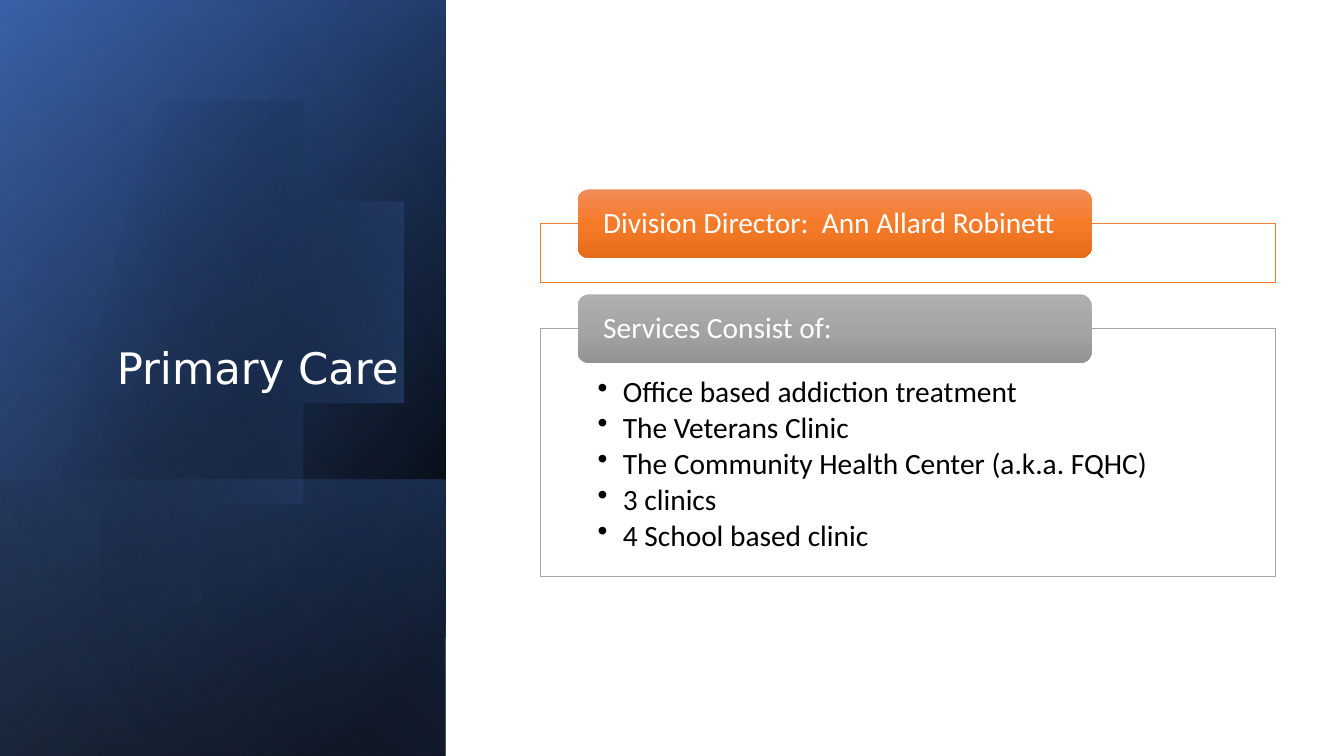
from dataclasses import dataclass
from math import acos, cos, sin

from lxml.etree import SubElement
from pptx import Presentation
from pptx.dml.color import RGBColor
from pptx.enum.shapes import MSO_SHAPE as Preset
from pptx.enum.text import MSO_ANCHOR as Anchor, PP_ALIGN as Align
from pptx.oxml.ns import qn
from pptx.util import Emu, Inches, Pt

COLORS = {"white": "FFFFFF", "black": "000000", "navy": "2F5597", "blue": "4472C4",
          "pale_blue": "8FAADC", "orange": "ED7D31", "gray": "A5A5A5"}
TITLE_FONT, BODY_FONT = "DejaVu Sans", "Calibri"

presentation = Presentation()
presentation.slide_width, presentation.slide_height = Inches(13.333), Inches(7.5)
slide = presentation.slides.add_slide(presentation.slide_layouts[6])

# The grid has 100 columns and 100 rows
COLUMN, ROW = presentation.slide_width / 100, presentation.slide_height / 100


@dataclass(frozen=True)
class Area:
    """Left and width in columns, top and height in rows."""
    left: float
    top: float
    width: float
    height: float

    def box(self) -> tuple:
        return tuple(Emu(round(length)) for length in (
            self.left * COLUMN, self.top * ROW, self.width * COLUMN, self.height * ROW))


@dataclass(frozen=True)
class Stop:
    position: int
    color: str
    opacity: int = 100


@dataclass(frozen=True)
class Panel:
    area: Area
    stops: tuple
    angle: int


@dataclass(frozen=True)
class Card:
    heading: str
    items: tuple
    top: float
    height: float
    accent: str
    shades: tuple


def rgb(name: str) -> RGBColor:
    return RGBColor.from_string(COLORS[name])


def fill_gradient(shape, stops: tuple, angle: float) -> None:
    shape.fill.gradient()
    gradient = shape._element.spPr.find(qn("a:gradFill"))
    for child in list(gradient):
        gradient.remove(child)
    gradient.set("rotWithShape", "1")
    stop_list = SubElement(gradient, qn("a:gsLst"))
    for stop in stops:
        mark = SubElement(stop_list, qn("a:gs"), pos=str(stop.position * 1000))
        color = SubElement(mark, qn("a:srgbClr"), val=COLORS.get(stop.color, stop.color))
        if stop.opacity < 100:
            SubElement(color, qn("a:alpha"), val=str(stop.opacity * 1000))
    SubElement(gradient, qn("a:lin"), ang=str(round(angle * 60000)), scaled="0")
    shape.line.fill.background()
    shape.shadow.inherit = False


def draw_panel(panel: Panel) -> None:
    """Turn a mirrored rectangle by 90 degrees so that it covers the area."""
    left, top, width, height = panel.area.box()
    shift = (width - height) // 2
    shape = slide.shapes.add_shape(Preset.RECTANGLE, left + shift, top - shift, height, width)
    shape.rotation = 90
    shape._element.spPr.find(qn("a:xfrm")).set("flipH", "1")
    fill_gradient(shape, panel.stops, panel.angle)


def draw_disc(center_x: float, center_y: float, radius: float, stops: tuple, angle: float) -> None:
    """Draw a disc, in inches, cut straight at the slide's left edge."""
    steps = 120
    reach = acos(-center_x / radius)
    turns = [reach * (2 * step / steps - 1) for step in range(steps + 1)]
    points = [(center_x + radius * cos(turn), center_y + radius * sin(turn)) for turn in turns]
    builder = slide.shapes.build_freeform(*points[0], scale=Inches(1))
    builder.add_line_segments(points[1:], close=True)
    fill_gradient(builder.convert_to_shape(), stops, angle)


def set_frame(shape, anchor, insets: tuple):
    frame = shape.text_frame
    frame.word_wrap = True
    frame.vertical_anchor = anchor
    (frame.margin_left, frame.margin_top,
     frame.margin_right, frame.margin_bottom) = (Inches(inset) for inset in insets)
    return frame


def write(paragraph, text: str, size: float, font: str, color: str, align=Align.LEFT) -> None:
    paragraph.alignment = align
    paragraph.line_spacing = 0.9
    run = paragraph.add_run()
    run.text = text
    run.font.size, run.font.name = Pt(size), font
    run.font.color.rgb = rgb(color)


def add_bullet(paragraph) -> None:
    properties = paragraph._p.get_or_add_pPr()
    properties.set("marL", str(Inches(0.25)))
    properties.set("indent", str(-Inches(0.25)))
    SubElement(properties, qn("a:buChar"), char="•")


def draw_card(card: Card) -> None:
    outline = slide.shapes.add_shape(
        Preset.RECTANGLE, *Area(40.2, card.top, 54.68, card.height).box())
    outline.shadow.inherit = False
    outline.fill.solid()
    outline.fill.fore_color.rgb = rgb("white")
    fill_color = outline._element.spPr.find(qn("a:solidFill"))[0]
    SubElement(fill_color, qn("a:alpha"), val="90000")
    outline.line.color.rgb = rgb(card.accent)
    outline.line.width = Pt(0.5)
    if card.items:
        frame = set_frame(outline, Anchor.TOP, (0.57, 0.48, 0.57, 0.16))
        for index, item in enumerate(card.items):
            paragraph = frame.add_paragraph() if index else frame.paragraphs[0]
            write(paragraph, item, 21, BODY_FONT, "black")
            paragraph.space_after = Pt(3)
            add_bullet(paragraph)

    # The heading straddles the outline's top edge
    heading_height = 9.07
    heading = slide.shapes.add_shape(Preset.ROUNDED_RECTANGLE, *Area(
        42.98, card.top - heading_height / 2, 38.25, heading_height).box())
    stops = tuple(Stop(50 * index, shade) for index, shade in enumerate(card.shades))
    fill_gradient(heading, stops, 90)
    frame = set_frame(heading, Anchor.MIDDLE, (0.22, 0, 0.22, 0))
    write(frame.paragraphs[0], card.heading, 21, BODY_FONT, "white")


# Blue side panel, from back to front
side = Area(0, 0, 33.15, 100)
foot = Area(0, 63.47, 33.15, 36.53)
for back_panel in (
    Panel(side, (Stop(8, "black"), Stop(100, "navy")), 50),
    Panel(side, (Stop(0, "black", 0), Stop(99, "blue", 46)), 30),
    Panel(foot, (Stop(2, "blue", 29), Stop(100, "black", 30)), 130),
):
    draw_panel(back_panel)
draw_disc(1.43, 3.39, 2.29, (Stop(29, "black", 0), Stop(100, "blue", 43)), 14)
draw_panel(Panel(side, (Stop(0, "black", 0), Stop(99, "pale_blue", 11)), 120))

# Title
title = slide.shapes.add_textbox(*Area(4.8, 24.53, 25.58, 34.93).box())
title_frame = set_frame(title, Anchor.BOTTOM, (0.1, 0.05, 0.1, 0.55))
write(title_frame.paragraphs[0], "Primary Care", 31, TITLE_FONT, "white", Align.RIGHT)

# Cards
for section in (
    Card("Division Director:  Ann Allard Robinett", (), 29.6, 7.73, "orange",
         ("F18C57", "F67B28", "E56C19")),
    Card("Services Consist of:",
         ("Office based addiction treatment", "The Veterans Clinic",
          "The Community Health Center (a.k.a. FQHC)", "3 clinics", "4 School based clinic"),
         43.47, 32.8, "gray", ("AFAFAF", "A5A5A5", "939393")),
):
    draw_card(section)

presentation.save("out.pptx")
